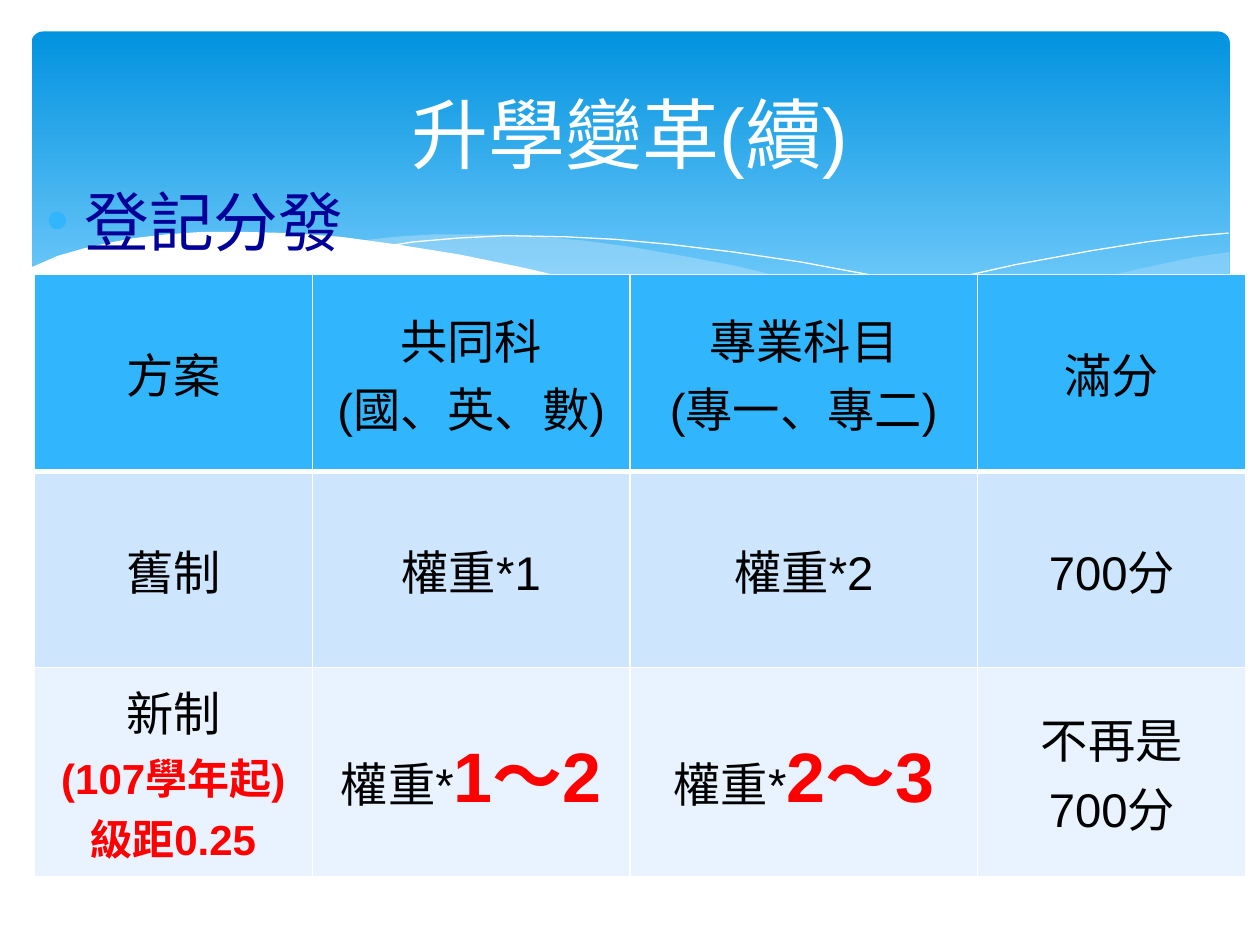
import pptx
import pptx.util
import pptx.dml.color
import pptx.enum.shapes
import pptx.enum.text
import pptx.oxml
import pptx.oxml.ns
from pptx.util import Inches

THEME = {
    "sky_top": "0293E0", "sky_bottom": "83D3FE", "wave": "C6E7FC",
    "white": "FFFFFF", "black": "000000", "navy": "000099", "red": "FF0000",
    "accent": "31B6FD", "rows": ["31B6FD", "CEE5FE", "E8F3FF"],
    "font": "Arial", "list_font": "Noto Sans CJK SC",
    "title": 44, "list": 37, "cell": 27, "note": 24, "weight": 40,
}
rgb = pptx.dml.color.RGBColor.from_string


def add_run(paragraph, text, size, color, font=THEME["font"], bold=False):
    run = paragraph.add_run()
    run.text = text
    run.font.size = pptx.util.Pt(size)
    run.font.name = font
    run.font.bold = bold
    run.font.color.rgb = rgb(THEME[color])


def add_xml(parent, index, tag, color, width=None, alpha=100):
    """Insert a coloured DrawingML element, with a width if it is a border."""
    size = f' w="{pptx.util.Pt(width)}"' if width else ""
    clr = f'<a:srgbClr val="{color}"><a:alpha val="{alpha * 1000}"/></a:srgbClr>'
    if tag != "buClr":
        clr = f"<a:solidFill>{clr}</a:solidFill>"
    namespace = pptx.oxml.ns.nsdecls("a")
    parent.insert(index, pptx.oxml.parse_xml(f"<a:{tag} {namespace}{size}>{clr}</a:{tag}>"))


presentation = pptx.Presentation()
presentation.slide_width, presentation.slide_height = Inches(10), Inches(7.5)
slide = presentation.slides.add_slide(presentation.slide_layouts[1])
shapes = slide.shapes

# Gradient sky
sky = shapes.add_shape(pptx.enum.shapes.MSO_SHAPE.ROUNDED_RECTANGLE,
                       Inches(0.25), Inches(0.25), Inches(9.51), Inches(2.7))
sky.adjustments[0] = 0.034
sky.shadow.inherit = False
sky.line.fill.background()
sky.fill.gradient()
sky.fill.gradient_angle = 270
for stop, color, position in zip(sky.fill.gradient_stops, ("sky_top", "sky_bottom"), (0, 0.9)):
    stop.color.rgb = rgb(THEME[color])
    stop.position = position

# Waves: outline points, fill opacity in percent (None for a bare line)
waves = [
    ([(9.76, 2), (9.48, 2.04), (9.06, 2.13), (8.61, 2.23), (7.79, 2.43), (7.06, 2.57),
      (6.61, 2.65), (7.05, 2.71), (7.57, 2.76), (8.14, 2.78), (8.63, 2.75), (9.05, 2.69),
      (9.42, 2.59), (9.76, 2.47)], 29),
    ([(8.93, 2.73), (8.37, 2.65), (7.75, 2.54), (7.06, 2.4), (6.29, 2.22), (5.84, 2.11),
      (5.41, 2.03), (5.01, 1.96), (4.64, 1.91), (4.2, 1.87), (3.8, 1.86), (3.44, 1.86),
      (3.13, 1.88), (2.86, 1.91), (3.42, 1.99), (4.04, 2.11), (4.49, 2.22), (5.3, 2.4),
      (6.01, 2.55), (6.65, 2.66), (7.22, 2.74), (7.85, 2.78), (8.38, 2.78)], 40),
    ([(3.09, 1.95), (3.28, 1.92), (3.63, 1.89), (4.01, 1.87), (4.5, 1.88), (4.89, 1.9),
      (5.32, 1.94), (5.82, 2), (6.36, 2.08), (6.95, 2.19), (7.6, 2.33), (8.31, 2.51),
      (9.07, 2.72)], None),
    ([(6.13, 2.57), (6.52, 2.46), (6.95, 2.35), (7.48, 2.23), (8.06, 2.1), (8.66, 1.99),
      (9.1, 1.92), (9.51, 1.87), (9.75, 1.85)], None),
    ([(9.77, 2.46), (9.5, 2.56), (9.2, 2.65), (8.87, 2.71), (8.5, 2.75), (8.09, 2.77),
      (7.61, 2.75), (7.08, 2.7), (6.47, 2.62), (5.79, 2.5), (5.03, 2.33), (4.18, 2.13),
      (3.65, 2.02), (3.15, 1.94), (2.71, 1.88), (2.3, 1.85), (1.93, 1.84), (1.61, 1.84),
      (1.32, 1.86), (1.06, 1.89), (0.85, 1.93), (0.67, 1.97), (0.46, 2.03), (0.23, 2.13),
      (0.23, 3.29), (9.77, 3.29)], 100),
]
for points, opacity in waves:
    corners = [(Inches(x), Inches(y)) for x, y in points]
    outline = shapes.build_freeform(*corners[0])
    outline.add_line_segments(corners[1:], close=opacity is not None)
    wave = outline.convert_to_shape()
    wave.shadow.inherit = False
    if opacity is None:
        wave.fill.background()
        wave.line.color.rgb = rgb(THEME["white"])
        wave.line.width = pptx.util.Pt(0)
        continue
    wave.line.fill.background()
    wave.fill.solid()
    wave.fill.fore_color.rgb = rgb(THEME["white" if opacity == 100 else "wave"])
    if opacity < 100:
        properties = wave.element.spPr
        old_fill = properties.find(pptx.oxml.ns.qn("a:solidFill"))
        clr = old_fill[0]
        alpha = clr.makeelement(pptx.oxml.ns.qn("a:alpha"), {"val": str(opacity * 1000)})
        clr.append(alpha)

# Title and list, brought in front of the sky
heading, topic = shapes.title, slide.placeholders[1]
for placeholder, box in ((heading, (0.5, 0.37, 9, 1.37)), (topic, (0.27, 1.39, 9.21, 5.47))):
    placeholder.left, placeholder.top, placeholder.width, placeholder.height = map(Inches, box)
    placeholder.text_frame.auto_size = pptx.enum.text.MSO_AUTO_SIZE.NONE
    sky.element.getparent().append(placeholder.element)
heading.text_frame.vertical_anchor = pptx.enum.text.MSO_ANCHOR.MIDDLE
heading_line = heading.text_frame.paragraphs[0]
heading_line.alignment = pptx.enum.text.PP_ALIGN.CENTER
add_run(heading_line, "升學變革(續)", THEME["title"], "white")

topic_line = topic.text_frame.paragraphs[0]
add_run(topic_line, "登記分發", THEME["list"], "navy", THEME["list_font"])
indent = topic_line._p.get_or_add_pPr()
indent.set("marL", str(Inches(0.3)))
indent.set("indent", str(Inches(-0.3)))
add_xml(indent, 0, "buClr", THEME["accent"])

# Comparison table: cell > paragraphs > (text, size, colour) runs
PLAIN, NOTE, WEIGHT = ("cell", "black"), ("note", "red"), ("weight", "red")
schemes = [
    [[[("方案", PLAIN)]],
     [[("共同科", PLAIN)], [("(國、英、數)", PLAIN)]],
     [[("專業科目", PLAIN)], [("(專一、專二)", PLAIN)]],
     [[("滿分", PLAIN)]]],
    [[[("舊制", PLAIN)]], [[("權重*1", PLAIN)]], [[("權重*2", PLAIN)]], [[("700分", PLAIN)]]],
    [[[("新制", PLAIN)], [("(107學年起)", NOTE)], [("級距0.25", NOTE)]],
     [[("權重*", PLAIN), ("1～2", WEIGHT)]],
     [[("權重*", PLAIN), ("2～3", WEIGHT)]],
     [[("不再是", PLAIN)], [("700分", PLAIN)]]],
]
weights = shapes.add_table(3, 4, Inches(0.27), Inches(2.18), Inches(9.62), Inches(4.78)).table
for column, width in zip(weights.columns, (2.21, 2.52, 2.76, 2.13)):
    column.width = Inches(width)
for row, height in zip(weights.rows, (1.56, 1.56, 1.66)):
    row.height = Inches(height)

for r, scheme in enumerate(schemes):
    for c, lines in enumerate(scheme):
        cell = weights.cell(r, c)
        cell.vertical_anchor = pptx.enum.text.MSO_ANCHOR.MIDDLE
        cell.fill.solid()
        cell.fill.fore_color.rgb = rgb(THEME["rows"][r])
        for side, tag in enumerate(("lnL", "lnR", "lnT", "lnB")):
            thick = r == 0 and tag == "lnB"
            add_xml(cell._tc.tcPr, side, tag, THEME["white"], 3 if thick else 1)
        for n, runs in enumerate(lines):
            line = cell.text_frame.add_paragraph() if n else cell.text_frame.paragraphs[0]
            line.alignment = pptx.enum.text.PP_ALIGN.CENTER
            for text, (size, color) in runs:
                add_run(line, text, THEME[size], color, bold=color == "red")

presentation.save("out.pptx")
